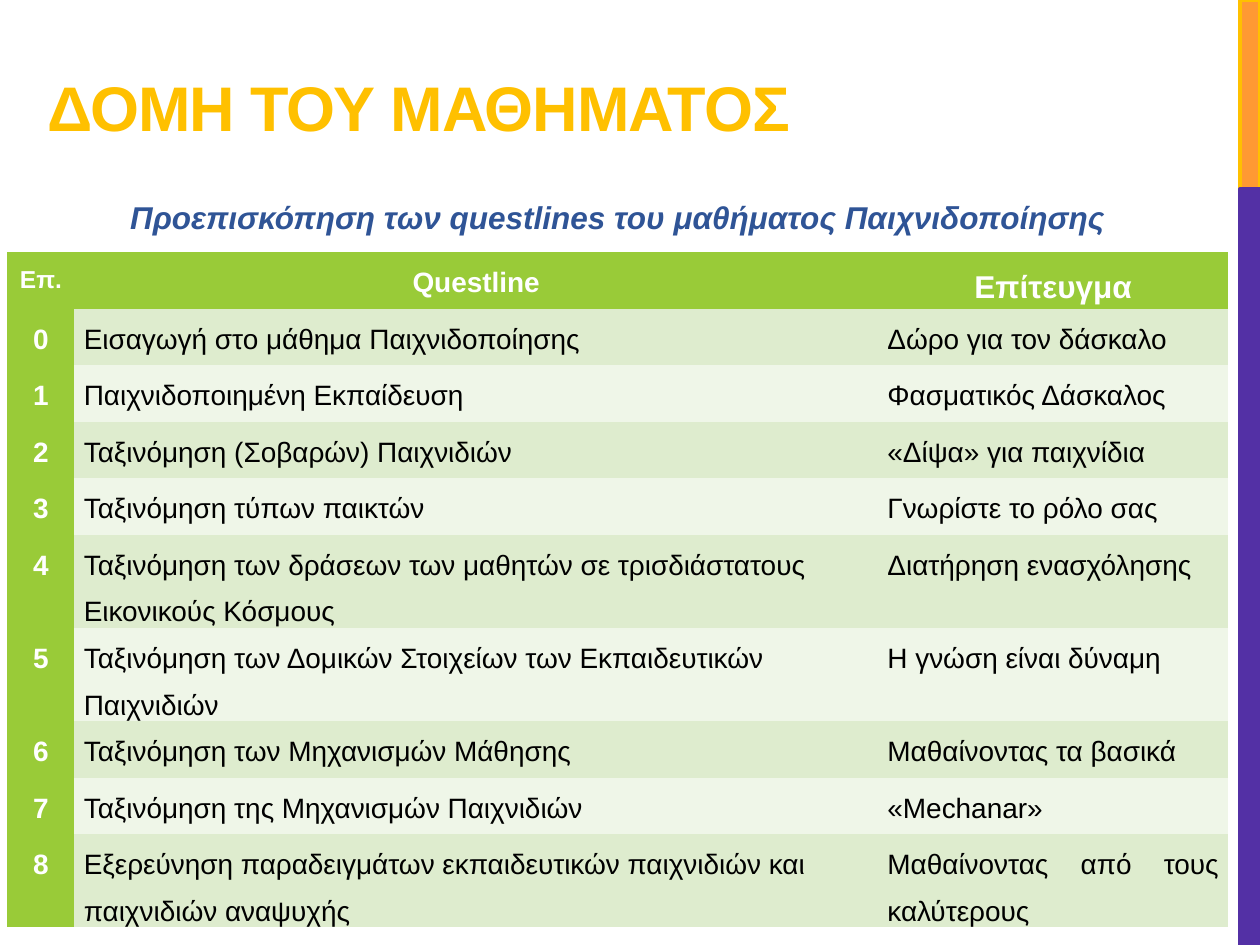
"""Build the course structure slide with its table of questlines."""
from pptx import Presentation
from pptx.dml.color import RGBColor
from pptx.enum.shapes import MSO_SHAPE
from pptx.enum.text import MSO_ANCHOR, MSO_AUTO_SIZE, PP_ALIGN
from pptx.util import Cm, Pt

AMBER = RGBColor(0xFF, 0xC0, 0x00)
ORANGE = RGBColor(0xFF, 0x99, 0x33)
PURPLE = RGBColor(0x53, 0x30, 0xA5)
BLUE = RGBColor(0x2F, 0x54, 0x96)
GREEN = RGBColor(0x99, 0xCB, 0x38)
LIGHT = RGBColor(0xDE, 0xEC, 0xCE)
PALE = RGBColor(0xEF, 0xF6, 0xE8)
WHITE = RGBColor(0xFF, 0xFF, 0xFF)
BLACK = RGBColor(0x00, 0x00, 0x00)

NO_GRID = "{2D5ABB26-0587-4C30-8999-92F81FD0307C}"
HEADERS = ["Επ.", "Questline", "Επίτευγμα"]
HEADER_SIZES = [14, 16, 18]
QUESTS = [
    ("Εισαγωγή στο μάθημα Παιχνιδοποίησης", "Δώρο για τον δάσκαλο"),
    ("Παιχνιδοποιημένη Εκπαίδευση", "Φασματικός Δάσκαλος"),
    ("Ταξινόμηση (Σοβαρών) Παιχνιδιών", "«Δίψα» για παιχνίδια"),
    ("Ταξινόμηση τύπων παικτών", "Γνωρίστε το ρόλο σας"),
    ("Ταξινόμηση των δράσεων των μαθητών σε τρισδιάστατους Εικονικούς Κόσμους",
     "Διατήρηση ενασχόλησης"),
    ("Ταξινόμηση των Δομικών Στοιχείων των Εκπαιδευτικών Παιχνιδιών",
     "Η γνώση είναι δύναμη"),
    ("Ταξινόμηση των Μηχανισμών Μάθησης", "Μαθαίνοντας τα βασικά"),
    ("Ταξινόμηση της Μηχανισμών Παιχνιδιών", "«Mechanar»"),
    ("Εξερεύνηση παραδειγμάτων εκπαιδευτικών παιχνιδιών και παιχνιδιών αναψυχής",
     "Μαθαίνοντας από τους καλύτερους"),
]


def set_all(obj, values):
    for name, value in values.items():
        setattr(obj, name, value)


def write(tf, text, para, font, color):
    p = tf.paragraphs[0]
    set_all(p, para)
    r = p.add_run()
    r.text = text
    set_all(r.font, {"name": "Arial", **font})
    r.font.color.rgb = color
    return r


prs = Presentation()
set_all(prs, {"slide_width": Cm(25.4), "slide_height": Cm(19.05)})
s = prs.slides.add_slide(prs.slide_layouts[5])

for top, height, fill, line in [(0, 3.81, ORANGE, AMBER), (3.81, 15.24, PURPLE, PURPLE)]:
    sp = s.shapes.add_shape(MSO_SHAPE.RECTANGLE, Cm(25), Cm(top), Cm(0.4), Cm(height))
    sp.shadow.inherit = False
    sp.fill.solid()
    sp.fill.fore_color.rgb = fill
    sp.line.color.rgb = line
    sp.line.width = Pt(2.25)

title = s.shapes.title
set_all(title, {"left": Cm(0.71), "top": Cm(0.53), "width": Cm(16.08), "height": Cm(2.51)})
set_all(title.text_frame, {"word_wrap": True, "auto_size": MSO_AUTO_SIZE.NONE,
                           "vertical_anchor": MSO_ANCHOR.BOTTOM})
r = write(title.text_frame, "ΔΟΜΗ ΤΟΥ ΜΑΘΗΜΑΤΟΣ", {"alignment": PP_ALIGN.LEFT},
          {"size": Pt(36), "bold": True}, AMBER)
r.font._element.set("spc", "-60")

frame = s.shapes.add_table(len(QUESTS) + 1, 3, Cm(0.15), Cm(5.08), Cm(24.61), Cm(11.4))
table = frame.table
table._tbl.tblPr.find("{*}tableStyleId").text = NO_GRID
for col, width in zip(table.columns, [1.35, 16.2, 7.06]):
    col.width = Cm(width)
for row in table.rows:
    row.height = Cm(1.14)

rows = [HEADERS] + [(str(n), *quest) for n, quest in enumerate(QUESTS)]
for i, texts in enumerate(rows):
    for j, text in enumerate(texts):
        key = i == 0 or j == 0
        if key:
            align = PP_ALIGN.CENTER
        else:
            align = PP_ALIGN.JUSTIFY if j == 2 or i == 1 else PP_ALIGN.LEFT
        cell = table.cell(i, j)
        set_all(cell, {"margin_left": Cm(0.19), "margin_right": Cm(0.19),
                       "margin_top": 0, "margin_bottom": 0})
        cell.fill.solid()
        cell.fill.fore_color.rgb = GREEN if key else LIGHT if i % 2 else PALE
        write(cell.text_frame, text,
              {"alignment": align, "line_spacing": 1.5, "space_after": Pt(3)},
              {"size": Pt(16 if i else HEADER_SIZES[j]), "bold": key},
              WHITE if key else BLACK)

sp = s.shapes.add_textbox(Cm(0.15), Cm(3.48), Cm(24.61), Cm(1.3))
sp.text_frame.word_wrap = True
write(sp.text_frame, "Προεπισκόπηση των questlines του μαθήματος Παιχνιδοποίησης",
      {"alignment": PP_ALIGN.CENTER, "line_spacing": 1.5, "space_after": Pt(6)},
      {"size": Pt(18), "bold": True, "italic": True}, BLUE)

prs.save("out.pptx")
